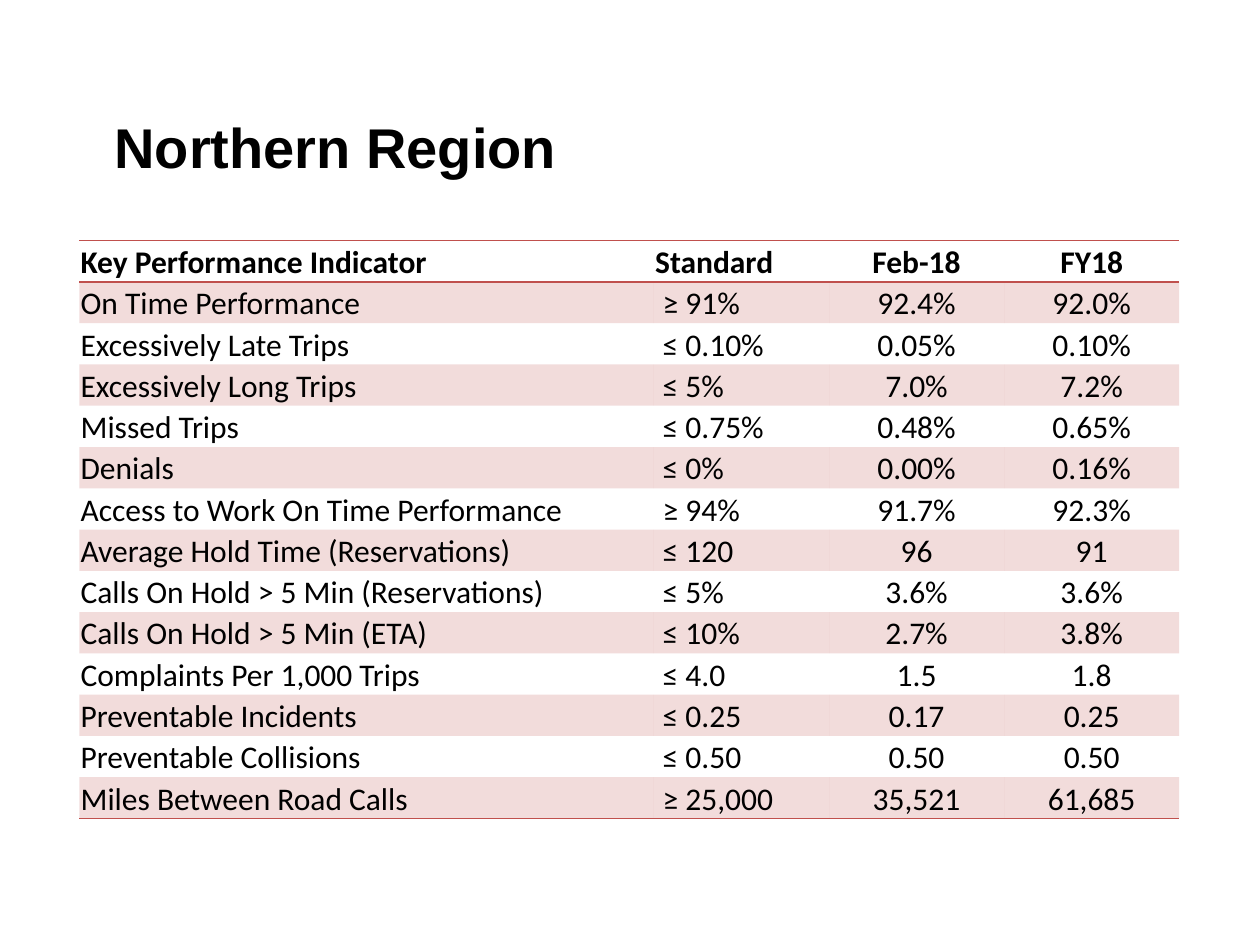
from dataclasses import dataclass

from lxml.etree import SubElement as Sub
from pptx import Presentation as Deck
from pptx.dml.color import RGBColor as Color
from pptx.enum.text import MSO_ANCHOR as Anchor, PP_ALIGN as Align
from pptx.oxml import parse_xml as to_xml
from pptx.oxml.ns import nsdecls, qn
from pptx.util import Inches, Pt

HUES = {"ink": "000000", "red": "C0504D"}
PLAIN = "{2D5ABB26-0587-4C30-8999-92F81FD0307C}"
HEAD = {"name": "Arial", "size": Pt(32), "bold": True}
BODY = {"name": "Calibri", "size": Pt(18), "bold": False}
BOLD = BODY | {"bold": True}
CELL = {
    "vertical_anchor": Anchor.BOTTOM,
    "margin_left": Inches(0.01),
    "margin_right": Inches(0.01),
    "margin_top": Inches(0.01),
    "margin_bottom": 0,
}
SIGN = CELL | {"margin_left": Inches(0.07)}
WIDTHS = [4.56, 1.39, 1.39, 1.39]
ALIGNS = [Align.LEFT, Align.LEFT, Align.CENTER, Align.CENTER]


@dataclass
class Row:
    label: str
    goal: str
    month: str
    year: str

    def texts(self) -> list[str]:
        return [self.label, self.goal, self.month, self.year]


ROWS = [
    Row("Key Performance Indicator", "Standard", "Feb-18", "FY18"),
    Row("On Time Performance", "≥ 91%", "92.4%", "92.0%"),
    Row("Excessively Late Trips", "≤ 0.10%", "0.05%", "0.10%"),
    Row("Excessively Long Trips", "≤ 5%", "7.0%", "7.2%"),
    Row("Missed Trips", "≤ 0.75%", "0.48%", "0.65%"),
    Row("Denials", "≤ 0%", "0.00%", "0.16%"),
    Row("Access to Work On Time Performance", "≥ 94%", "91.7%", "92.3%"),
    Row("Average Hold Time (Reservations)", "≤ 120", "96", "91"),
    Row("Calls On Hold > 5 Min (Reservations)", "≤ 5%", "3.6%", "3.6%"),
    Row("Calls On Hold > 5 Min (ETA)", "≤ 10%", "2.7%", "3.8%"),
    Row("Complaints Per 1,000 Trips", "≤ 4.0", "1.5", "1.8"),
    Row("Preventable Incidents", "≤ 0.25", "0.17", "0.25"),
    Row("Preventable Collisions", "≤ 0.50", "0.50", "0.50"),
    Row("Miles Between Road Calls", "≥ 25,000", "35,521", "61,685"),
]


def apply(item, values: dict) -> None:
    for key, value in values.items():
        setattr(item, key, value)


def write(frame, text: str, style: dict, align: Align) -> None:
    para = frame.paragraphs[0]
    para.alignment = align
    run = para.add_run()
    run.text = text
    apply(run.font, style)
    run.font.color.rgb = Color.from_string(HUES["ink"])


def tint(cell, shaded: bool) -> None:
    if not shaded:
        cell.fill.background()
        return
    cell.fill.solid()
    cell.fill.fore_color.rgb = Color.from_string(HUES["red"])
    hue = cell._tc.tcPr.find(".//" + qn("a:srgbClr"))
    Sub(hue, qn("a:alpha"), val="20000")


def rule(cell, side: str) -> None:
    line = to_xml(
        f'<a:ln{side} {nsdecls("a")} w="{Pt(1)}"><a:solidFill>'
        f'<a:srgbClr val="{HUES["red"]}"/></a:solidFill></a:ln{side}>'
    )
    cell._tc.tcPr.insert(0, line)


def add_title(slide, text: str) -> None:
    box = slide.shapes.add_textbox(Inches(0.81), Inches(0.84), Inches(8.39), Inches(0.64))
    frame = box.text_frame
    apply(frame, {"word_wrap": True, "vertical_anchor": Anchor.MIDDLE})
    write(frame, text, HEAD, Align.LEFT)


def add_grid(slide, rows: list[Row]) -> None:
    frame = slide.shapes.add_table(
        len(rows), len(WIDTHS), Inches(0.63), Inches(1.91), Inches(sum(WIDTHS)), Inches(4.59)
    )
    table = frame.table
    apply(table, {"first_row": False, "horz_banding": False})
    table._tbl.tblPr.find(qn("a:tableStyleId")).text = PLAIN
    for col, width in zip(table.columns, WIDTHS):
        col.width = Inches(width)
    last = len(rows) - 1
    for i, row in enumerate(rows):
        table.rows[i].height = Inches(4.59 / len(rows))
        for j, text in enumerate(row.texts()):
            cell = table.cell(i, j)
            apply(cell, SIGN if i and j == 1 else CELL)
            write(cell.text_frame, text, BODY if i else BOLD, ALIGNS[j])
            tint(cell, i % 2 == 1)
            if i in (0, last):
                rule(cell, "B")
            if i == 0:
                rule(cell, "T")


def main() -> None:
    deck = Deck()
    apply(deck, {"slide_width": Inches(10), "slide_height": Inches(7.5)})
    slide = deck.slides.add_slide(deck.slide_layouts[6])
    add_title(slide, "Northern Region")
    add_grid(slide, ROWS)
    deck.save("out.pptx")


if __name__ == "__main__":
    main()
